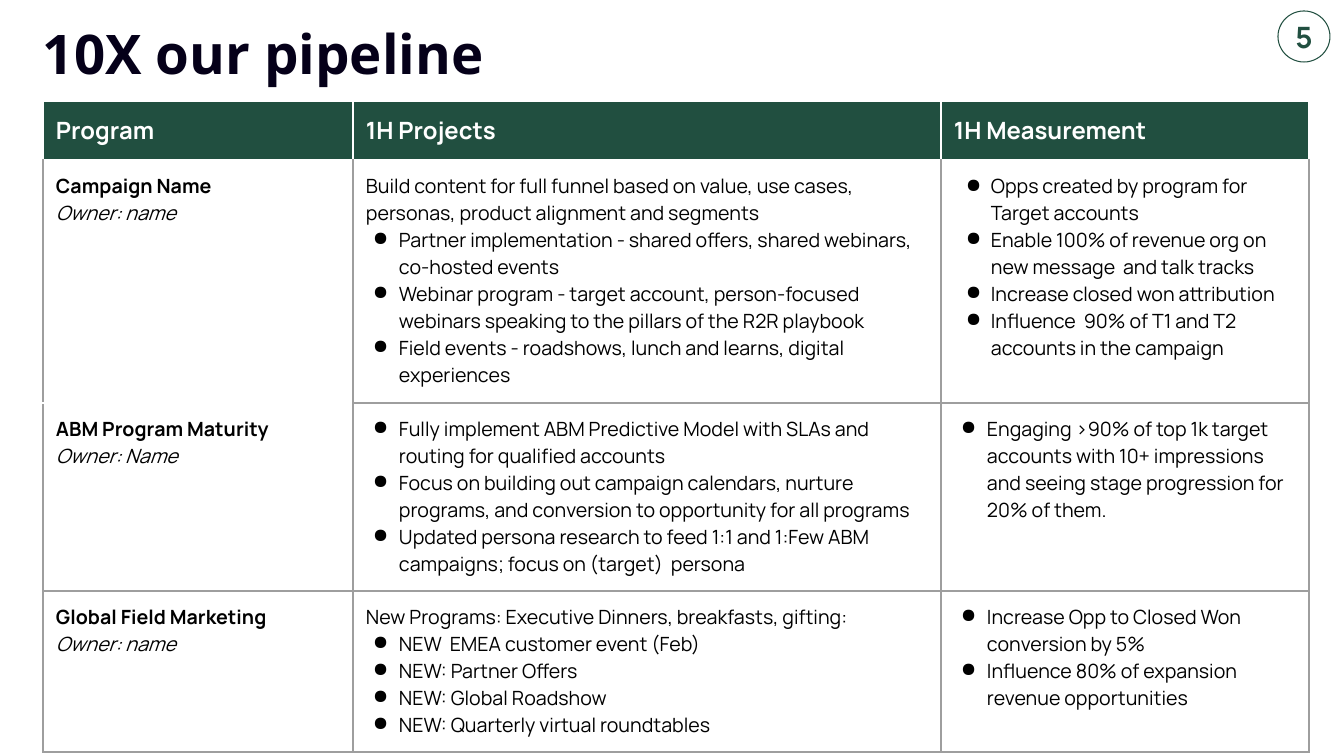
from dataclasses import dataclass

from lxml.etree import SubElement
from pptx import Presentation
from pptx.dml.color import RGBColor
from pptx.enum.shapes import MSO_SHAPE
from pptx.enum.text import MSO_ANCHOR, PP_ALIGN
from pptx.oxml.ns import qn
from pptx.slide import Slide
from pptx.table import _Cell
from pptx.text.text import TextFrame, _Paragraph
from pptx.util import Emu, Pt


@dataclass(frozen=True)
class Theme:
    green: str = "214F40"
    white: str = "FFFFFF"
    black: str = "000000"
    ink: str = "050019"
    grid: str = "9E9E9E"
    body_font: str = "Manrope"
    title_font: str = "Open Sans"
    title_size: int = 39
    number_size: int = 21
    header_size: int = 17
    body_size: int = 14


@dataclass(frozen=True)
class Style:
    font: str
    size: int
    color: str
    bold: bool = False
    italic: bool = False


@dataclass(frozen=True)
class Bullets:
    inset: int = 13
    margin: int = 33
    hanging: int = 26


@dataclass(frozen=True)
class Program:
    name: str
    owner: str
    intro: str
    projects: tuple[str, ...]
    measurements: tuple[str, ...]
    measurement_bullets: Bullets = Bullets()


THEME = Theme()
TITLE = Style(THEME.title_font, THEME.title_size, THEME.ink, bold=True)
NUMBER = Style(THEME.body_font, THEME.number_size, THEME.green, bold=True)
HEADER = Style(THEME.body_font, THEME.header_size, THEME.white, bold=True)
BODY = Style(THEME.body_font, THEME.body_size, THEME.black)
NAME = Style(THEME.body_font, THEME.body_size, THEME.black, bold=True)
OWNER = Style(THEME.body_font, THEME.body_size, THEME.black, italic=True)

CELL_INSET = 13
COLUMN_WIDTHS = (310, 588, 368)
ROW_HEIGHTS = (59, 243, 188, 161)
HEADINGS = ("Program", "1H Projects", "1H Measurement")
PROGRAMS = (
    Program(
        "Campaign Name",
        "Owner: name",
        "Build content for full funnel based on value, use cases, personas, "
        "product alignment and segments",
        (
            "Partner implementation - shared offers, shared webinars, co-hosted events",
            "Webinar program - target account, person-focused webinars speaking "
            "to the pillars of the R2R playbook",
            "Field events - roadshows, lunch and learns, digital experiences",
        ),
        (
            "Opps created by program for Target accounts",
            "Enable 100% of revenue org on new message  and talk tracks",
            "Increase closed won attribution",
            "Influence  90% of T1 and T2 accounts in the campaign",
        ),
        Bullets(inset=25, margin=25, hanging=35),
    ),
    Program(
        "ABM Program Maturity",
        "Owner: Name",
        "",
        (
            "Fully implement ABM Predictive Model with SLAs and routing for qualified accounts",
            "Focus on building out campaign calendars, nurture programs, and "
            "conversion to opportunity for all programs",
            "Updated persona research to feed 1:1 and 1:Few ABM campaigns; "
            "focus on (target)  persona",
        ),
        (
            "Engaging >90% of top 1k target accounts with 10+ impressions and "
            "seeing stage progression for 20% of them.",
        ),
    ),
    Program(
        "Global Field Marketing",
        "Owner: name",
        "New Programs: Executive Dinners, breakfasts, gifting:",
        (
            "NEW  EMEA customer event (Feb)",
            "NEW: Partner Offers",
            "NEW: Global Roadshow",
            "NEW: Quarterly virtual roundtables",
        ),
        (
            "Increase Opp to Closed Won conversion by 5%",
            "Influence 80% of expansion revenue opportunities",
        ),
    ),
)


def px(length: int) -> Emu:
    return Emu(round(length * 12192000 / 1344))


def add_bullet(para: _Paragraph, bullets: Bullets) -> None:
    properties = para._p.get_or_add_pPr()
    properties.set("marL", str(px(bullets.margin)))
    properties.set("indent", str(-px(bullets.hanging)))
    color = SubElement(properties, qn("a:buClr"))
    SubElement(color, qn("a:srgbClr"), val=THEME.black)
    SubElement(properties, qn("a:buChar"), char="●")


def write(frame: TextFrame, text: str, style: Style, bullets: Bullets | None = None) -> _Paragraph:
    """Fill the first paragraph if it is empty, else append one."""
    last = frame.paragraphs[-1]
    para = frame.add_paragraph() if last.text else last
    para.text = text
    if bullets:
        add_bullet(para, bullets)
    font = para.font
    font.name, font.size = style.font, Pt(style.size)
    font.bold, font.italic = style.bold, style.italic
    font.color.rgb = RGBColor.from_string(style.color)
    return para


def set_borders(cell: _Cell, **colors: str) -> None:
    """Draw the sides L, R, T and B, grey unless a colour is given."""
    properties = cell._tc.get_or_add_tcPr()
    for side in "LRTB":
        line = SubElement(properties, qn(f"a:ln{side}"), w=str(Pt(1)))
        fill = SubElement(line, qn("a:solidFill"))
        SubElement(fill, qn("a:srgbClr"), val=colors.get(side, THEME.grid))


def prepare_cell(cell: _Cell, fill: str, inset: int = CELL_INSET, **colors: str) -> TextFrame:
    cell.margin_left = px(inset)
    cell.margin_right = cell.margin_top = cell.margin_bottom = px(CELL_INSET)
    set_borders(cell, **colors)
    cell.fill.solid()
    cell.fill.fore_color.rgb = RGBColor.from_string(fill)
    return cell.text_frame


def add_program_table(page: Slide) -> None:
    table = page.shapes.add_table(
        len(ROW_HEIGHTS), len(COLUMN_WIDTHS), px(43), px(101),
        px(sum(COLUMN_WIDTHS)), px(sum(ROW_HEIGHTS)),
    ).table
    table.first_row = table.horz_banding = False
    for column, width in zip(table.columns, COLUMN_WIDTHS):
        column.width = px(width)
    for row, height in zip(table.rows, ROW_HEIGHTS):
        row.height = px(height)

    white_sides = dict.fromkeys("LRTB", THEME.white)
    for index, heading in enumerate(HEADINGS):
        write(prepare_cell(table.cell(0, index), THEME.green, **white_sides), heading, HEADER)

    for row, program in enumerate(PROGRAMS, start=1):
        top = {"T": THEME.white} if row == 1 else {}
        # No rule parts the first two program names.
        name_sides = {1: {"T": THEME.white, "B": THEME.white}, 2: {"T": THEME.white}}.get(row, {})
        frame = prepare_cell(table.cell(row, 0), THEME.white, **name_sides)
        write(frame, program.name, NAME)
        write(frame, program.owner, OWNER)

        frame = prepare_cell(table.cell(row, 1), THEME.white, **top)
        if program.intro:
            write(frame, program.intro, BODY)
        for project in program.projects:
            write(frame, project, BODY, Bullets())

        bullets = program.measurement_bullets
        frame = prepare_cell(table.cell(row, 2), THEME.white, bullets.inset, **top)
        for measurement in program.measurements:
            write(frame, measurement, BODY, bullets)


def add_title(page: Slide) -> None:
    frame = page.shapes.add_textbox(px(33), px(15), px(1252), px(84)).text_frame
    frame.word_wrap = True
    frame.vertical_anchor = MSO_ANCHOR.MIDDLE
    write(frame, "10X our pipeline", TITLE).line_spacing = 0.9


def add_page_number(page: Slide) -> None:
    badge = page.shapes.add_shape(MSO_SHAPE.OVAL, px(1278), px(11), px(52), px(51))
    badge.shadow.inherit = False
    badge.fill.solid()
    badge.fill.fore_color.rgb = RGBColor.from_string(THEME.white)
    badge.line.color.rgb = RGBColor.from_string(THEME.green)
    badge.line.width = Pt(0.75)
    frame = badge.text_frame
    frame.margin_left = frame.margin_right = 0
    frame.margin_top = frame.margin_bottom = px(10)
    frame.vertical_anchor = MSO_ANCHOR.MIDDLE
    write(frame, "5", NUMBER).alignment = PP_ALIGN.CENTER


def main() -> None:
    deck = Presentation()
    deck.slide_width, deck.slide_height = px(1344), px(756)
    page = deck.slides.add_slide(deck.slide_layouts[6])
    add_program_table(page)
    add_title(page)
    add_page_number(page)
    deck.save("out.pptx")


if __name__ == "__main__":
    main()
